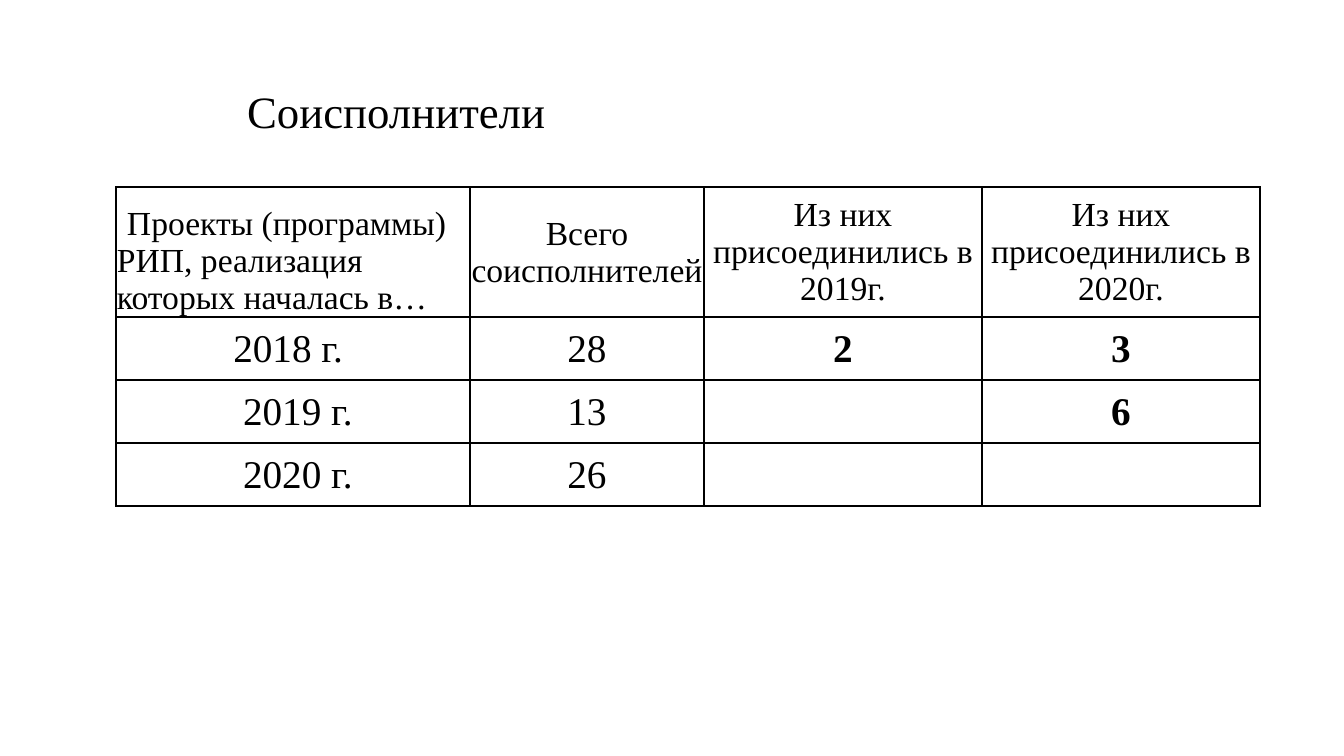
from dataclasses import dataclass

from lxml import etree
from pptx import Presentation
from pptx import util as u
from pptx.dml.color import RGBColor
from pptx.enum import text
from pptx.oxml import ns

PX = 914400 / 100.8
BLACK = RGBColor(0, 0, 0)
FACE = "Times New Roman"
MID, LOW = text.MSO_ANCHOR.MIDDLE, text.MSO_ANCHOR.BOTTOM
LEFT, MIDST = text.PP_ALIGN.LEFT, text.PP_ALIGN.CENTER


@dataclass
class Entry:
    words: str
    size: int = 28
    bold: bool = False
    align: text.PP_ALIGN = MIDST
    anchor: text.MSO_ANCHOR = MID
    indent: int = 0


def px(count: int) -> u.Emu:
    return u.Emu(round(count * PX))


def style(para, size: int, bold: bool, align: text.PP_ALIGN) -> None:
    font = para.font
    font.name, font.size, font.bold = FACE, u.Pt(size), bold
    font.color.rgb = BLACK
    para.alignment = align


def border(cell) -> None:
    props = cell._tc.get_or_add_tcPr()
    for side in ("a:lnL", "a:lnR", "a:lnT", "a:lnB"):
        line = etree.SubElement(props, ns.qn(side), w=str(u.Pt(1)))
        fill = etree.SubElement(line, ns.qn("a:solidFill"))
        etree.SubElement(fill, ns.qn("a:srgbClr"), val=str(BLACK))


def fill_cell(cell, entry: Entry) -> None:
    border(cell)
    cell.fill.background()
    cell.margin_left = cell.margin_right = cell.margin_top = px(1)
    cell.margin_bottom = 0
    cell.vertical_anchor = entry.anchor
    cell.text = entry.words
    para = cell.text_frame.paragraphs[0]
    style(para, entry.size, entry.bold, entry.align)
    if entry.indent:
        para._p.get_or_add_pPr().set("indent", str(px(entry.indent)))


WIDTHS = [354, 234, 278, 278]
HEIGHTS = [130, 63, 63, 63]
ROWS = [
    [Entry("Проекты (программы) РИП, реализация которых началась в…",
           24, align=LEFT, anchor=LOW, indent=10),
     Entry("Всего соисполнителей", 24),
     Entry("Из них присоединились в 2019г.", 24),
     Entry("Из них присоединились в 2020г.", 24)],
    [Entry("2018 г. "), Entry("28"), Entry("2", bold=True), Entry("3", bold=True)],
    [Entry(" 2019 г."), Entry("13"), Entry(""), Entry("6", bold=True)],
    [Entry(" 2020 г."), Entry("26"), Entry(""), Entry("")],
]


def main() -> None:
    deck = Presentation()
    deck.slide_width, deck.slide_height = px(1344), px(756)
    slide = deck.slides.add_slide(deck.slide_layouts[5])

    # Title
    title = slide.shapes.title
    title.left, title.top, title.width, title.height = map(px, (237, 84, 869, 59))
    frame = title.text_frame
    frame.text = "Соисполнители"
    frame.vertical_anchor = MID
    frame.auto_size = text.MSO_AUTO_SIZE.SHAPE_TO_FIT_TEXT
    style(frame.paragraphs[0], 32, False, LEFT)
    frame.paragraphs[0].line_spacing = 0.9

    # Table of co-executors
    table = slide.shapes.add_table(
        len(ROWS), len(WIDTHS), px(116), px(187),
        px(sum(WIDTHS)), px(sum(HEIGHTS))).table
    table.first_row = table.horz_banding = False
    for col, width in zip(table.columns, WIDTHS):
        col.width = px(width)
    for row, height, items in zip(table.rows, HEIGHTS, ROWS):
        row.height = px(height)
        for cell, entry in zip(row.cells, items):
            fill_cell(cell, entry)

    deck.save("out.pptx")


if __name__ == "__main__":
    main()
